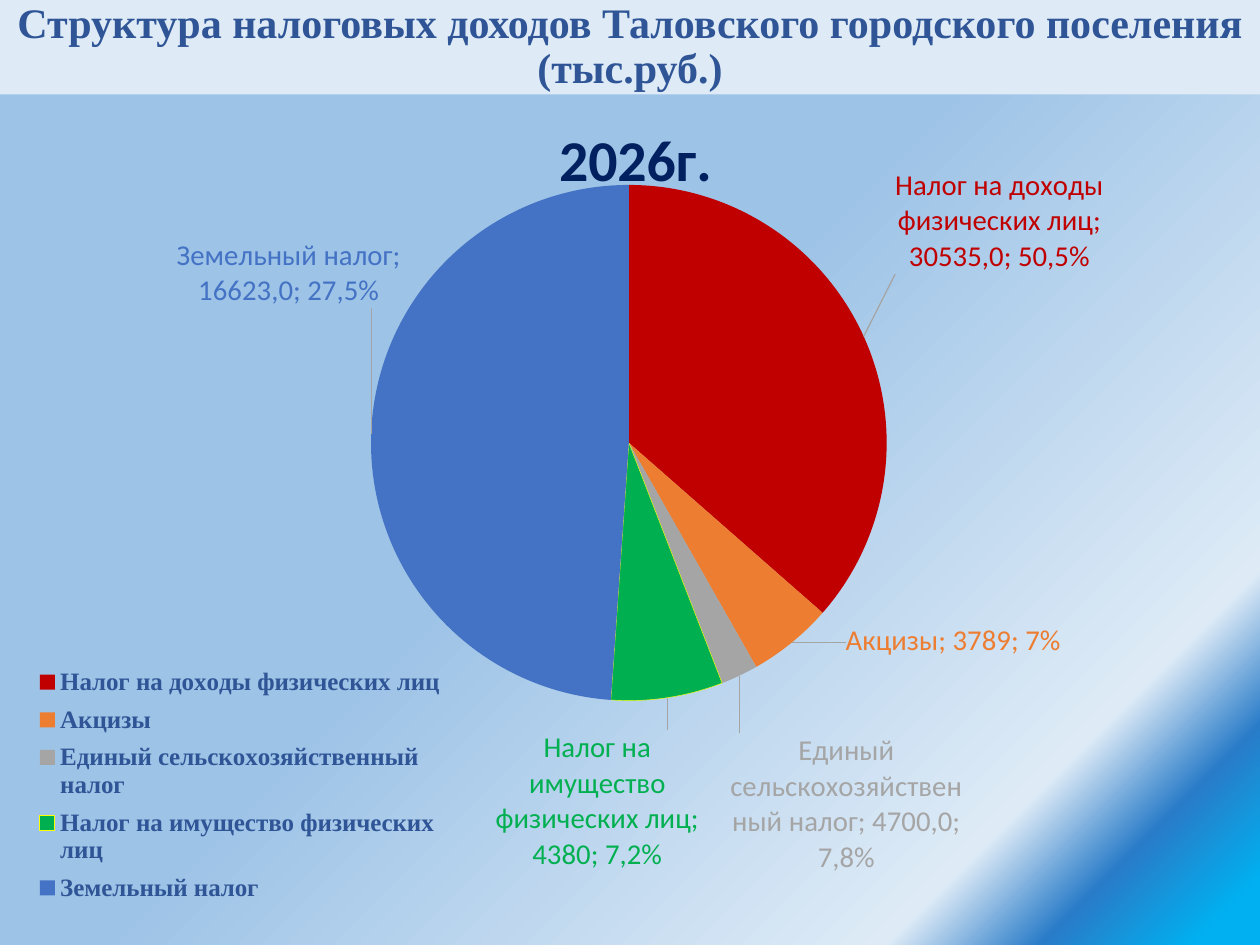
from lxml import etree
from pptx import Presentation
from pptx.chart.data import CategoryChartData
from pptx.dml.color import RGBColor
from pptx.enum.chart import XL_CHART_TYPE, XL_LABEL_POSITION, XL_LEGEND_POSITION
from pptx.enum.shapes import MSO_SHAPE
from pptx.enum.text import MSO_ANCHOR, PP_ALIGN
from pptx.oxml import parse_xml
from pptx.oxml.ns import nsdecls, qn
from pptx.util import Inches, Pt

PIE = XL_CHART_TYPE.PIE
OUT = XL_LABEL_POSITION.OUTSIDE_END
RIGHT = XL_LEGEND_POSITION.RIGHT
RECT = MSO_SHAPE.RECTANGLE
MIDDLE = MSO_ANCHOR.MIDDLE
CENTER = PP_ALIGN.CENTER

THEME = {
    "head": {"name": "Times New Roman", "size": Pt(24), "bold": True, "color": "2F5597"},
    "year": {"name": "Calibri", "size": Pt(33), "bold": True, "color": "002060"},
    "key": {"name": "Times New Roman", "size": Pt(14.3), "bold": True, "color": "2F5597"},
    "tag": {"name": "Calibri", "size": Pt(16.4), "bold": True, "color": "5B9BD5"},
    "label": {"name": "Calibri", "size": Pt(16.4), "bold": False},
    "base": {"name": "Calibri", "size": Pt(10), "color": "000000"},
    "band": "DEEBF7",
    "edge": "FFFF00",
    "lead": "A5A5A5",
    "back": [(3, "00B0F0"), (10, "297CC8"), (17, "DEEBF7"), (53, "9DC3E6"), (96, "9DC3E6")],
}

TAXES = [
    ("Налог на доходы физических лиц", 15625, "30535,0; 50,5%", "C00000", 0.02, -0.07),
    ("Акцизы", 2276, "3789; 7%", "ED7D31", 0.04, -0.03),
    ("Единый сельскохозяйственный налог", 1000, "4700,0; 7,8%", "A5A5A5", -0.01, 0.06),
    ("Налог на имущество физических лиц", 3000, "4380; 7,2%", "00B050", -0.14, 0.03),
    ("Земельный налог", 20950, "16623,0; 27,5%", "4472C4", 0.03, -0.19),
]


def style(font, look):
    for key, val in look.items():
        if key == "color":
            font.color.rgb = RGBColor.from_string(val)
        else:
            setattr(font, key, val)


def place(node, spot, **vals):
    for old in node.findall(qn("c:layout")):
        node.remove(old)
    box = etree.Element(qn("c:layout"))
    form = etree.SubElement(box, qn("c:manualLayout"))
    for key, val in vals.items():
        etree.SubElement(form, qn(f"c:{key}")).set("val", str(val))
    node.insert(spot, box)


prs = Presentation()
prs.slide_width, prs.slide_height = Inches(10), Inches(7.5)
slide = prs.slides.add_slide(prs.slide_layouts[6])

stops = "".join(
    f'<a:gs pos="{pos * 1000}"><a:srgbClr val="{hue}"/></a:gs>' for pos, hue in THEME["back"]
)
slide.background.fill.solid()
solid = slide.element.find(".//" + qn("p:bgPr")).find(qn("a:solidFill"))
solid.getparent().replace(solid, parse_xml(
    f'<a:gradFill rotWithShape="1" {nsdecls("a")}><a:gsLst>{stops}</a:gsLst>'
    '<a:path path="circle"><a:fillToRect l="100000" t="100000"/></a:path>'
    '<a:tileRect r="-100000" b="-100000"/></a:gradFill>'
))

head = slide.shapes.add_shape(RECT, 0, 0, Inches(10), Inches(0.75))
head.shadow.inherit = False
head.fill.solid()
head.fill.fore_color.rgb = RGBColor.from_string(THEME["band"])
head.line.fill.background()
frame = head.text_frame
frame.word_wrap = True
frame.vertical_anchor = MIDDLE
para = frame.paragraphs[0]
para.alignment = CENTER
para.line_spacing = 0.9
run = para.add_run()
run.text = "Структура налоговых доходов Таловского городского поселения (тыс.руб.)"
style(run.font, THEME["head"])

data = CategoryChartData()
data.categories = [tax[0] for tax in TAXES]
data.add_series("Series 1", [tax[1] for tax in TAXES])
chart = slide.shapes.add_chart(
    PIE, Inches(0.14), Inches(0.73), Inches(9.8), Inches(6.71), data
).chart
style(chart.font, THEME["base"])
root = chart.element

chart.has_title = True
run = chart.chart_title.text_frame.paragraphs[0].add_run()
run.text = "2026г."
style(run.font, THEME["year"])
place(root.find(".//" + qn("c:title")), 1, xMode="edge", yMode="edge", x=0.43, y=0.02)

chart.has_legend = True
chart.legend.position = RIGHT
chart.legend.include_in_layout = False
style(chart.legend.font, THEME["key"])
place(root.find(".//" + qn("c:legend")), 1, xMode="edge", yMode="edge",
      x=0.01, y=0.67, w=0.34, h=0.3)
place(root.find(".//" + qn("c:plotArea")), 0, layoutTarget="inner",
      xMode="edge", yMode="edge", x=0.16, y=0.11, w=0.67, h=0.61)

plot = chart.plots[0]
plot.vary_by_categories = True
pie = plot.series[0]
tags = pie.data_labels
style(tags.font, THEME["tag"])
tags.show_value = True
tags.show_category_name = True
tags.position = OUT

for num, (name, _, text, hue, x, y) in enumerate(TAXES):
    point = pie.points[num]
    point.format.fill.solid()
    point.format.fill.fore_color.rgb = RGBColor.from_string(hue)
    point.format.line.fill.background()
    label = point.data_label
    run = label.text_frame.paragraphs[0].add_run()
    run.text = f"{name}; {text}"
    style(run.font, {**THEME["label"], "color": hue})
    label.position = OUT
    place(root.findall(".//" + qn("c:dLbl"))[num], 1, x=x, y=y)

line = pie.points[3].format.line
line.color.rgb = RGBColor.from_string(THEME["edge"])
line.width = Pt(0.25)

show = root.find(".//" + qn("c:ser")).find(qn("c:dLbls")).find(qn("c:showLeaderLines"))
show.set("val", "1")
show.addnext(parse_xml(
    f'<c:leaderLines {nsdecls("c", "a")}><c:spPr><a:ln w="9525"><a:solidFill>'
    f'<a:srgbClr val="{THEME["lead"]}"/></a:solidFill></a:ln></c:spPr></c:leaderLines>'
))

prs.save("out.pptx")
